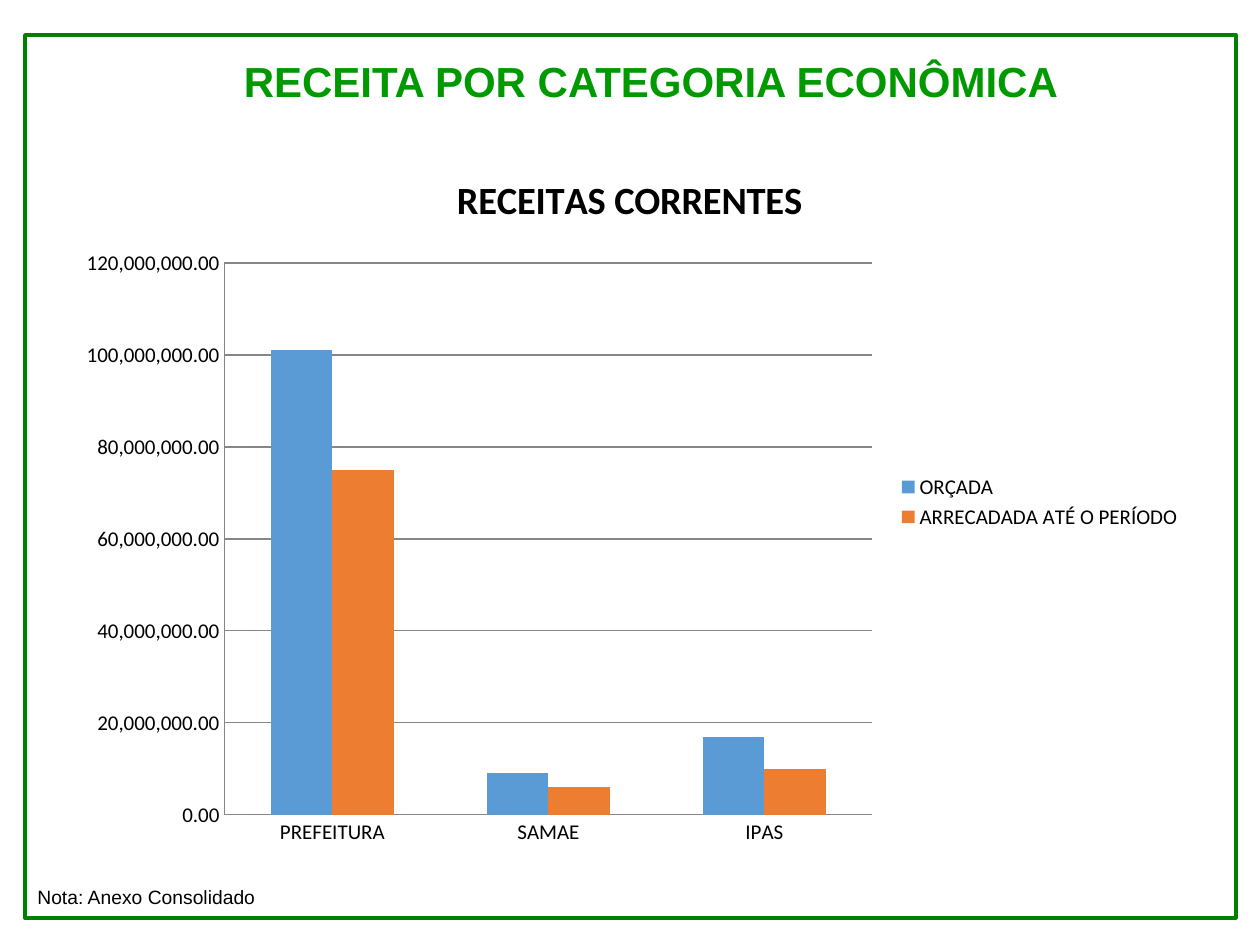
from pptx import Presentation
from pptx.chart.data import CategoryChartData
from pptx.dml.color import RGBColor
from pptx.enum.chart import XL_CHART_TYPE, XL_LEGEND_POSITION, XL_TICK_MARK
from pptx.enum.shapes import MSO_SHAPE
from pptx.enum.text import MSO_ANCHOR, PP_ALIGN
from pptx.util import Emu, Pt

GREEN = RGBColor(0x00, 0x99, 0x00)
DARK_GREEN = RGBColor(0x00, 0x80, 0x00)
BLACK = RGBColor(0x00, 0x00, 0x00)
GRAY = RGBColor(0x86, 0x86, 0x86)
BLUE = RGBColor(0x5B, 0x9B, 0xD5)
ORANGE = RGBColor(0xED, 0x7D, 0x31)


class Deck:
    """Holds the style and the current slide, and adds each kind of element."""

    SCALE = 914400 / 126
    TEXT_FONT = "Arial"
    CHART_FONT = "Calibri"

    def __init__(self, width, height):
        self.prs = Presentation()
        self.prs.slide_width, self.prs.slide_height = self.emu(width, height)
        self.s = self.prs.slides.add_slide(self.prs.slide_layouts[5])

    def emu(self, *lengths):
        return [Emu(round(n * self.SCALE)) for n in lengths]

    def font(self, font, size, color=BLACK, bold=False, name=TEXT_FONT):
        font.name, font.size, font.bold = name, Pt(size), bold
        font.color.rgb = color

    def title(self, text, *box):
        sp = self.s.shapes.title
        sp.left, sp.top, sp.width, sp.height = self.emu(*box)
        tf = sp.text_frame
        tf.text = text
        tf.vertical_anchor = MSO_ANCHOR.MIDDLE
        p = tf.paragraphs[0]
        p.alignment, p.line_spacing = PP_ALIGN.CENTER, 0.9
        self.font(p.runs[0].font, 24, GREEN, True)

    def frame(self, *box):
        sp = self.s.shapes.add_shape(MSO_SHAPE.RECTANGLE, *self.emu(*box))
        sp.shadow.inherit = False
        sp.fill.background()
        sp.line.color.rgb, sp.line.width = DARK_GREEN, Pt(2)

    def note(self, text, *box):
        tf = self.s.shapes.add_textbox(*self.emu(*box)).text_frame
        tf.word_wrap = True
        tf.text = text
        self.font(tf.paragraphs[0].runs[0].font, 11)

    def columns(self, title, categories, series, *box):
        data = CategoryChartData(number_format="#,##0.00")
        data.categories = categories
        for name, _, values in series:
            data.add_series(name, values)
        chart = self.s.shapes.add_chart(
            XL_CHART_TYPE.COLUMN_CLUSTERED, *self.emu(*box), data).chart
        self.font(chart.font, 10, name=self.CHART_FONT)

        chart.has_title = True
        tf = chart.chart_title.text_frame
        tf.text = title
        self.font(tf.paragraphs[0].runs[0].font, 22, bold=True, name=self.CHART_FONT)
        chart.chart_title.include_in_layout = False

        chart.has_legend = True
        chart.legend.position = XL_LEGEND_POSITION.RIGHT
        chart.legend.include_in_layout = False
        self.font(chart.legend.font, 12, name=self.CHART_FONT)

        for axis in (chart.category_axis, chart.value_axis):
            axis.major_tick_mark = axis.minor_tick_mark = XL_TICK_MARK.NONE
            axis.format.line.color.rgb = GRAY
            self.font(axis.tick_labels.font, 12, name=self.CHART_FONT)
        axis = chart.value_axis
        axis.minimum_scale, axis.maximum_scale, axis.major_unit = 0, 120_000_000, 20_000_000
        axis.major_gridlines.format.line.color.rgb = GRAY
        axis.tick_labels.number_format = "#,##0.00"
        axis.tick_labels.number_format_is_linked = False

        plot = chart.plots[0]
        plot.gap_width, plot.overlap, plot.vary_by_categories = 150, 0, False
        for bars, (_, color, _) in zip(plot.series, series):
            bars.format.fill.solid()
            bars.format.fill.fore_color.rgb = color


def main():
    deck = Deck(1260, 945)
    deck.title("RECEITA POR CATEGORIA ECONÔMICA", 108, 26, 1086, 115)
    deck.frame(25, 35, 1211, 883)
    deck.note("Nota: Anexo Consolidado", 25, 879, 328, 37)
    deck.columns(
        "RECEITAS CORRENTES",
        ["PREFEITURA", "SAMAE", "IPAS"],
        [("ORÇADA", BLUE, (101_000_000, 9_000_000, 17_000_000)),
         ("ARRECADADA ATÉ O PERÍODO", ORANGE, (75_000_000, 6_000_000, 10_000_000))],
        64, 145, 1131, 714)
    deck.prs.save("out.pptx")


if __name__ == "__main__":
    main()
